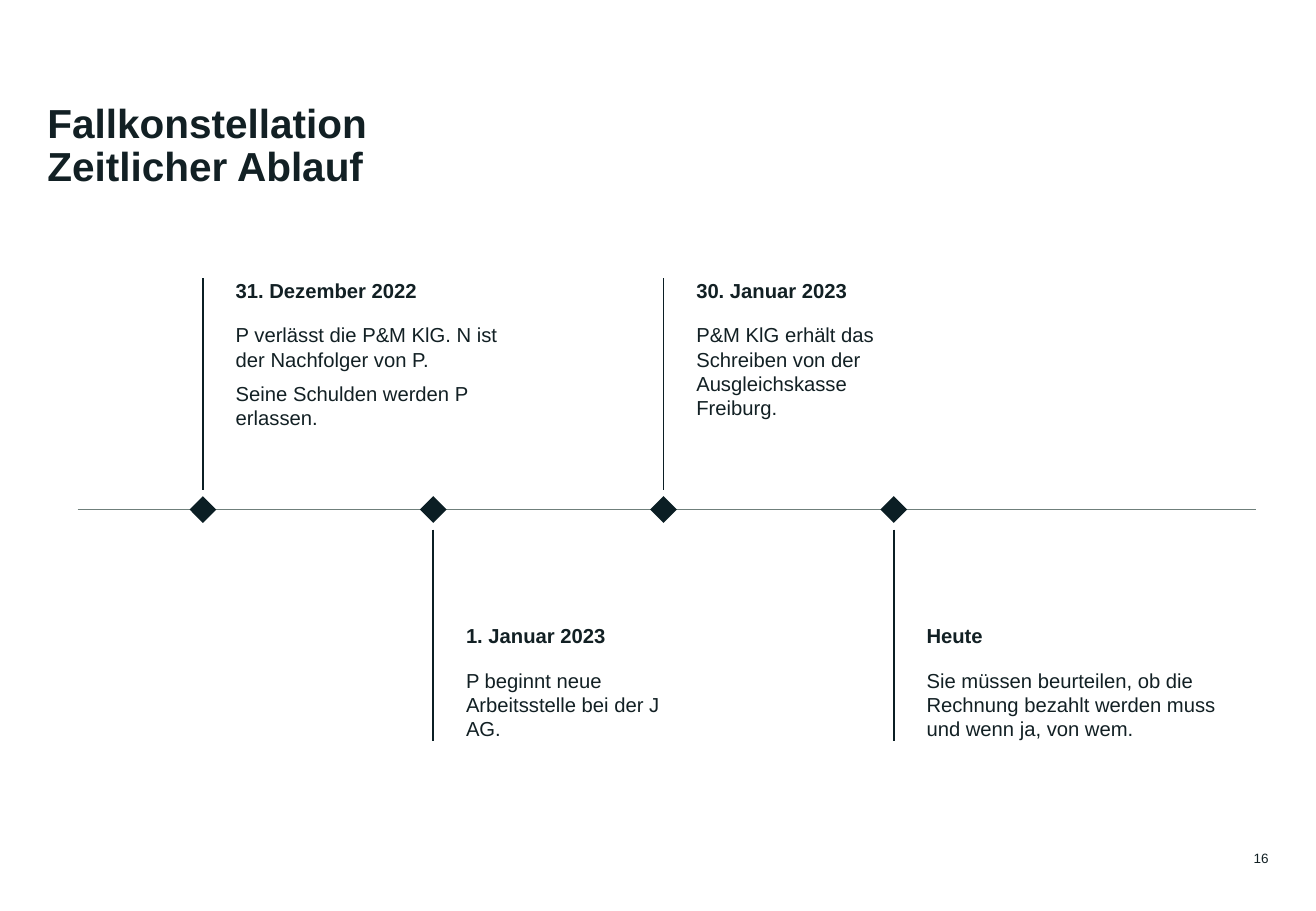
from dataclasses import dataclass

from pptx import Presentation
from pptx.dml.color import RGBColor
from pptx.enum.shapes import MSO_CONNECTOR, MSO_SHAPE
from pptx.enum.text import MSO_ANCHOR, PP_ALIGN
from pptx.oxml.ns import qn
from pptx.util import Inches, Pt

STRAIGHT = MSO_CONNECTOR.STRAIGHT
DIAMOND = MSO_SHAPE.DIAMOND
TOP, MIDDLE, BOTTOM = MSO_ANCHOR.TOP, MSO_ANCHOR.MIDDLE, MSO_ANCHOR.BOTTOM
LEFT, RIGHT = PP_ALIGN.LEFT, PP_ALIGN.RIGHT


@dataclass(frozen=True)
class Theme:
    font: str = "Arial"
    text: RGBColor = RGBColor(0x12, 0x20, 0x24)
    marker: RGBColor = RGBColor(0x0B, 0x1E, 0x24)
    axis: RGBColor = RGBColor(0x6F, 0x7F, 0x7B)
    title_size: int = 24
    body_size: int = 12
    number_size: int = 8


THEME = Theme()

# Timeline grid in inches: one column per milestone, one row on each side of the axis
WIDTH, HEIGHT = 10.83, 7.5
FIRST_COLUMN, COLUMN = 1.67, 1.895
AXIS, ROW, GAP = 4.195, 1.74, 0.165
DIAMOND_SIZE = 0.22
TEXT_INDENT = 0.27

# Heading, paragraphs, text width; milestones alternate above and below the axis
MILESTONES = [
    ("31. Dezember 2022",
     ["P verlässt die P&M KlG. N ist der Nachfolger von P.",
      "Seine Schulden werden P erlassen."], 2.3),
    ("1. Januar 2023", ["P beginnt neue Arbeitsstelle bei der J AG."], 1.62),
    ("30. Januar 2023",
     ["P&M KlG erhält das Schreiben von der Ausgleichskasse Freiburg."], 1.62),
    ("Heute",
     ["Sie müssen beurteilen, ob die Rechnung bezahlt werden muss "
      "und wenn ja, von wem."], 2.42),
]


def add_text_box(slide, left, top, width, height, anchor):
    shape = slide.shapes.add_textbox(
        Inches(left), Inches(top), Inches(width), Inches(height))
    frame = shape.text_frame
    frame.word_wrap = True
    frame.vertical_anchor = anchor
    frame.margin_left = frame.margin_right = 0
    frame.margin_top = frame.margin_bottom = 0
    return frame


def write(paragraph, text, size, bold=False, alignment=LEFT):
    paragraph.text = text
    paragraph.alignment = alignment
    font = paragraph.font
    font.name, font.size, font.bold = THEME.font, Pt(size), bold
    font.color.rgb = THEME.text


def add_line(slide, start, end, color, weight=1):
    line = slide.shapes.add_connector(
        STRAIGHT, *(Inches(value) for value in (*start, *end)))
    line.line.color.rgb = color
    line.line.width = Pt(weight)
    properties = line._element.spPr
    properties.append(properties.makeelement(qn("a:effectLst"), {}))


def add_diamond(slide, center):
    shape = slide.shapes.add_shape(
        DIAMOND, Inches(center - DIAMOND_SIZE / 2),
        Inches(AXIS - DIAMOND_SIZE / 2),
        Inches(DIAMOND_SIZE), Inches(DIAMOND_SIZE))
    shape.shadow.inherit = False
    shape.fill.solid()
    shape.fill.fore_color.rgb = THEME.marker
    shape.line.fill.background()


def add_milestone(slide, index, heading, body, width):
    center = FIRST_COLUMN + index * COLUMN
    above = index % 2 == 0
    top = AXIS - GAP - ROW if above else AXIS + GAP
    add_diamond(slide, center)
    add_line(slide, (center, top), (center, top + ROW), THEME.marker)

    frame = add_text_box(slide, center + TEXT_INDENT, top, width, ROW,
                         TOP if above else BOTTOM)
    write(frame.paragraphs[0], heading, THEME.body_size, bold=True)
    frame.paragraphs[0].space_after = Pt(6)
    for text in body:
        paragraph = frame.add_paragraph()
        write(paragraph, text, THEME.body_size)
        paragraph.space_before = Pt(6)


def main():
    presentation = Presentation()
    presentation.slide_width = Inches(WIDTH)
    presentation.slide_height = Inches(HEIGHT)
    slide = presentation.slides.add_slide(presentation.slide_layouts[6])

    # Title
    title = add_text_box(slide, 0.39, 0.8, 7.4, 0.77, BOTTOM).paragraphs[0]
    write(title, "Fallkonstellation\vZeitlicher Ablauf",
          THEME.title_size, bold=True)
    title.line_spacing = 0.9

    # Timeline
    add_line(slide, (0.64, AXIS), (10.34, AXIS), THEME.axis, 0.75)
    for index, milestone in enumerate(MILESTONES):
        add_milestone(slide, index, *milestone)

    # Slide number
    number = add_text_box(slide, 9.94, 6.97, 0.5, 0.19, MIDDLE).paragraphs[0]
    write(number, "16", THEME.number_size, alignment=RIGHT)

    presentation.save("out.pptx")


if __name__ == "__main__":
    main()
